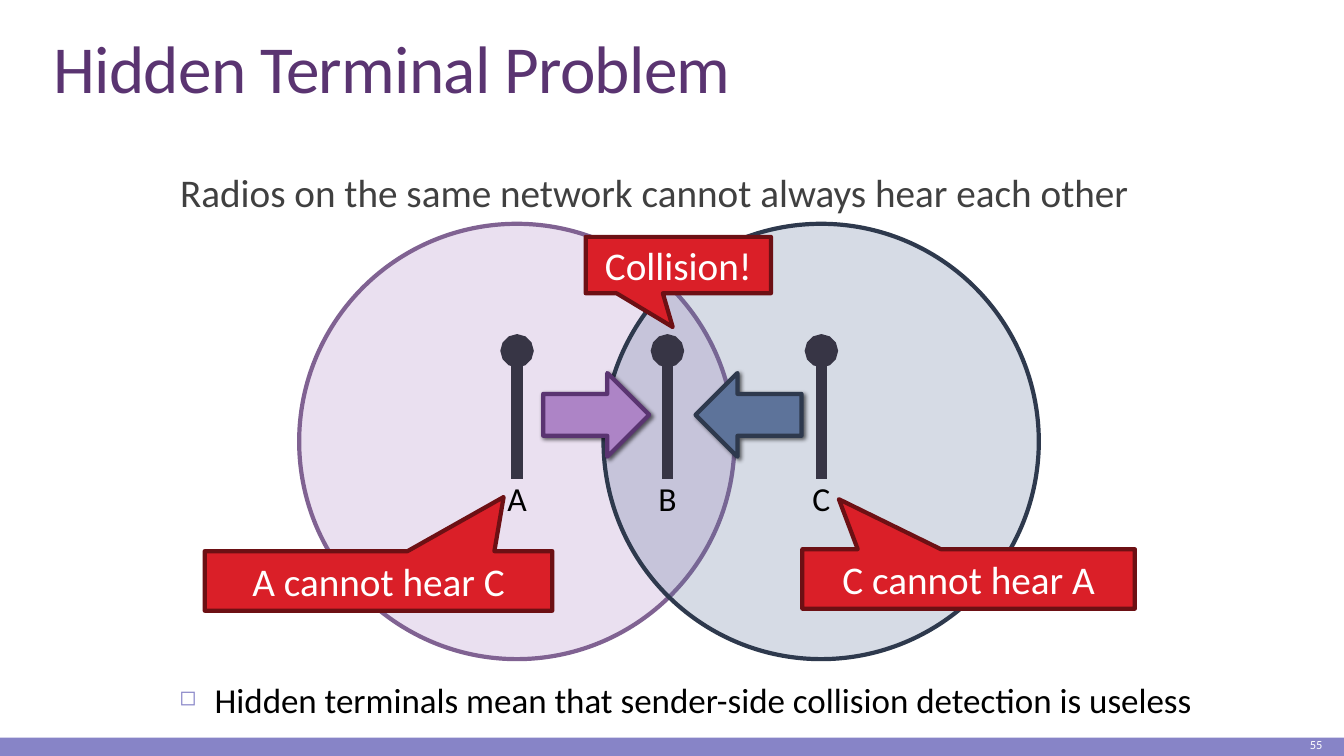
from lxml import etree
from pptx import Presentation
from pptx.dml.color import RGBColor
from pptx.enum.shapes import MSO_CONNECTOR as Connector, MSO_SHAPE as Shape
from pptx.enum.text import MSO_ANCHOR as Anchor, MSO_AUTO_SIZE as AutoSize, PP_ALIGN as Align
from pptx.oxml.ns import qn
from pptx.util import Cm, Pt

FONT = "Calibri"
COLORS = {
    "band": "8784C7", "title": "5A3471", "body": "404040",
    "black": "000000", "white": "FFFFFF", "antenna": "373545",
    "purple": "AD84C6", "purple_rim": "806292", "purple_edge": "5A3471",
    "blue": "5D739A", "blue_edge": "2E394D",
    "red": "DA1F28", "red_edge": "6D1014",
}


def rgb(name):
    return RGBColor.from_string(COLORS[name])


def add_element(parent, tag, **attributes):
    element = etree.SubElement(parent, qn(tag))
    for key, value in attributes.items():
        element.set(key, str(value))
    return element


def add_run(paragraph, text, size, color):
    run = paragraph.add_run()
    run.text = text
    run.font.name = FONT
    run.font.size = Pt(size)
    run.font.color.rgb = rgb(color)
    return run


def add_text(slide, box, text, size, color, align=Align.LEFT, anchor=Anchor.TOP, wrap=True):
    shape = slide.shapes.add_textbox(*map(Cm, box))
    frame = shape.text_frame
    frame.word_wrap = wrap
    frame.vertical_anchor = anchor
    paragraph = frame.paragraphs[0]
    paragraph.alignment = align
    add_run(paragraph, text, size, color)
    return shape


def add_figure(slide, preset, box, fill, line=None):
    shape = slide.shapes.add_shape(preset, *map(Cm, box))
    shape.shadow.inherit = False
    shape.fill.solid()
    shape.fill.fore_color.rgb = rgb(fill)
    if line:
        shape.line.color.rgb = rgb(line)
        shape.line.width = Pt(3)
    else:
        shape.line.fill.background()
    return shape


def add_radio_range(slide, left, fill, line):
    """Draw a see-through circle for the reach of one radio."""
    circle = add_figure(slide, Shape.OVAL, (left, 5.64, 10.97, 10.97), fill, line)
    color = circle._element.spPr.find(qn("a:solidFill"))[0]
    add_element(color, "a:alpha", val=25000)


def add_antenna(slide, x, label):
    mast = slide.shapes.add_connector(Connector.STRAIGHT, Cm(x), Cm(8.84), Cm(x), Cm(12.07))
    mast.line.color.rgb = rgb("antenna")
    mast.line.width = Pt(8)
    add_element(mast.line._get_or_add_ln(), "a:headEnd", type="oval")
    add_element(mast._element.spPr, "a:effectLst")
    add_text(slide, (x - 0.5, 11.91, 1, 1.27), label, 24, "black", Align.CENTER, wrap=False)


def add_signal(slide, preset, left, fill, line):
    """Draw a block arrow with a soft shadow."""
    arrow = add_figure(slide, preset, (left, 9.4, 2.67, 2.11), fill, line)
    effects = arrow._element.spPr.find(qn("a:effectLst"))
    shadow = add_element(effects, "a:outerShdw", blurRad=Pt(3), dist=Pt(2),
                         dir=45 * 60000, rotWithShape=0)
    color = add_element(shadow, "a:srgbClr", val=COLORS["black"])
    add_element(color, "a:alpha", val=60000)


def add_callout(slide, box, tip, text):
    callout = add_figure(slide, Shape.RECTANGULAR_CALLOUT, box, "red", "red_edge")
    callout.adjustments[0], callout.adjustments[1] = tip
    frame = callout.text_frame
    frame.word_wrap = True
    frame.vertical_anchor = Anchor.MIDDLE
    paragraph = frame.paragraphs[0]
    paragraph.alignment = Align.CENTER
    add_run(paragraph, text, 28, "white")


def set_title(slide, text):
    title = slide.shapes.title
    title.left, title.top, title.width, title.height = map(Cm, (1.09, 0.79, 32.11, 2.03))
    frame = title.text_frame
    frame.auto_size = AutoSize.NONE
    frame.vertical_anchor = Anchor.BOTTOM
    paragraph = frame.paragraphs[0]
    paragraph.alignment = Align.LEFT
    paragraph.line_spacing = 0.85
    run = add_run(paragraph, text, 48, "title")
    run.font._element.set("spc", "-50")


def add_lead(slide, text):
    lead = add_text(slide, (4.29, 4.24, 26.14, 1.68), text, 28, "body")
    lead.text_frame.margin_left = Cm(0.25)
    lead.text_frame.margin_right = 0
    lead.text_frame.paragraphs[0].line_spacing = 0.9


def add_bullet(slide, text):
    box = add_text(slide, (4.27, 16.97, 26.14, 1.68), text, 25, "black")
    properties = box.text_frame.paragraphs[0]._p.get_or_add_pPr()
    properties.set("marL", str(Cm(0.89)))
    properties.set("indent", str(-Cm(0.89)))
    color = add_element(properties, "a:buClr")
    add_element(color, "a:srgbClr", val=COLORS["band"])
    add_element(properties, "a:buSzPct", val=60000)
    add_element(properties, "a:buChar", char="◻")


def main():
    presentation = Presentation()
    presentation.slide_width, presentation.slide_height = Cm(33.87), Cm(19.05)
    slide = presentation.slides.add_slide(presentation.slide_layouts[5])

    add_figure(slide, Shape.RECTANGLE, (0, 18.59, 33.87, 0.46), "band")
    set_title(slide, "Hidden Terminal Problem")
    add_text(slide, (29.95, 18.49, 3.63, 0.56), "55", 8.9, "white", Align.RIGHT, Anchor.MIDDLE)

    add_radio_range(slide, 7.54, "purple", "purple_rim")
    add_radio_range(slide, 15.21, "blue", "blue_edge")
    for x, label in ((13.03, "A"), (16.82, "B"), (20.7, "C")):
        add_antenna(slide, x, label)
    add_signal(slide, Shape.RIGHT_ARROW, 13.69, "purple", "purple_edge")
    add_signal(slide, Shape.LEFT_ARROW, 17.53, "blue", "blue_edge")

    add_callout(slide, (14.76, 5.97, 4.67, 1.42), (-0.03, 1.1), "Collision!")
    add_callout(slide, (5.16, 13.89, 8.76, 1.5), (0.36, -1.41), "A cannot hear C")
    add_callout(slide, (20.22, 13.84, 8.38, 1.5), (-0.39, -1.34), "C cannot hear A")

    add_lead(slide, "Radios on the same network cannot always hear each other")
    add_bullet(slide, "Hidden terminals mean that sender-side collision detection is useless")
    presentation.save("out.pptx")


if __name__ == "__main__":
    main()
